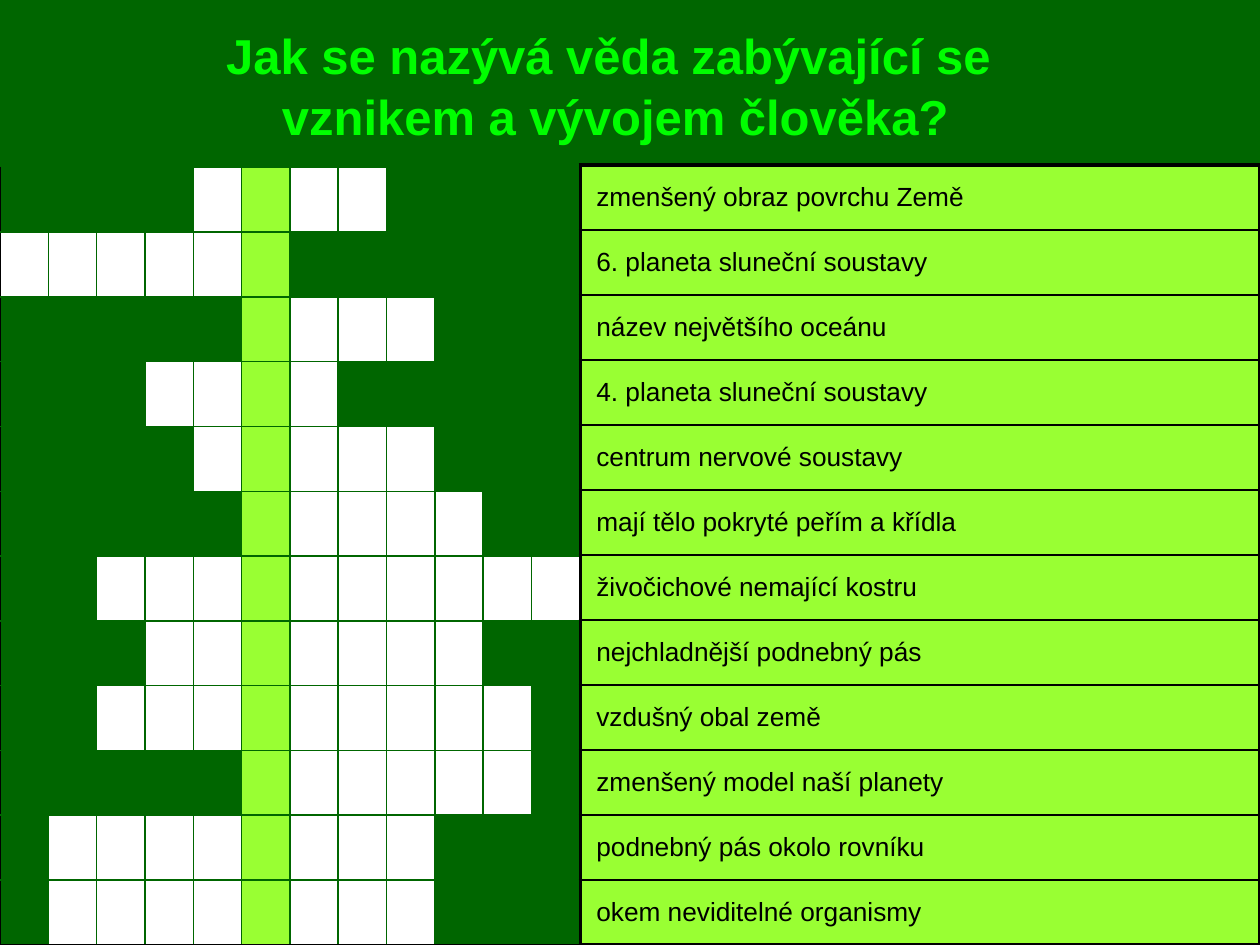
from lxml import etree
from pptx import Presentation
from pptx.dml.color import RGBColor
from pptx.enum import text
from pptx.oxml import ns
from pptx.util import Pt

DARK_GREEN = RGBColor(0x00, 0x66, 0x00)
BRIGHT_GREEN = RGBColor(0x00, 0xFF, 0x00)
LIME = RGBColor(0x99, 0xFF, 0x33)
WHITE = RGBColor(0xFF, 0xFF, 0xFF)
BLACK = RGBColor(0x00, 0x00, 0x00)

CLUES = [
    ("zmenšený obraz povrchu Země", 4, 7),
    ("6. planeta sluneční soustavy", 0, 5),
    ("název největšího oceánu", 5, 8),
    ("4. planeta sluneční soustavy", 3, 6),
    ("centrum nervové soustavy", 4, 8),
    ("mají tělo pokryté peřím a křídla", 5, 9),
    ("živočichové nemající kostru", 2, 11),
    ("nejchladnější podnebný pás", 3, 9),
    ("vzdušný obal země", 2, 10),
    ("zmenšený model naší planety", 5, 10),
    ("podnebný pás okolo rovníku", 1, 8),
    ("okem neviditelné organismy", 1, 8),
]
ROWS = len(CLUES)
LETTERS = 12
SOLUTION = 5


def add_grid(columns, left, top, width, height):
    grid = slide.shapes.add_table(
        ROWS, columns, Pt(left), Pt(top), Pt(width), Pt(height)
    ).table
    grid.first_row = False
    grid.horz_banding = False
    for column in grid.columns:
        column.width = Pt(width / columns)
    for row in grid.rows:
        row.height = Pt(height / ROWS)
    return grid


def paint_cell(cell, fill, borders):
    properties = cell._tc.get_or_add_tcPr()
    for side, (color, weight) in zip("LRTB", borders):
        line = etree.SubElement(properties, ns.qn(f"a:ln{side}"), w=str(Pt(weight)))
        solid = etree.SubElement(line, ns.qn("a:solidFill"))
        etree.SubElement(solid, ns.qn("a:srgbClr"), val=str(color))
    cell.fill.solid()
    cell.fill.fore_color.rgb = fill


prs = Presentation()
prs.slide_width = Pt(720)
prs.slide_height = Pt(540)
slide = prs.slides.add_slide(prs.slide_layouts[6])
slide.background.fill.solid()
slide.background.fill.fore_color.rgb = DARK_GREEN

question = slide.shapes.add_textbox(Pt(8.5), Pt(0), Pt(686), Pt(96)).text_frame
question.word_wrap = True
question.vertical_anchor = text.MSO_ANCHOR.MIDDLE
heading = question.paragraphs[0]
heading.alignment = text.PP_ALIGN.CENTER
heading.line_spacing = 1.05
for number, wording in enumerate(
    ["Jak se nazývá věda zabývající se ", "vznikem a vývojem člověka?"]
):
    if number:
        heading.add_line_break()
    run = heading.add_run()
    run.text = wording
    run.font.name = "Arial"
    run.font.size = Pt(28)
    run.font.bold = True
    run.font.color.rgb = BRIGHT_GREEN

crossword = add_grid(LETTERS, 0, 95.6, 331.6, 444.4)
for row, (clue, first, last) in enumerate(CLUES):
    for column in range(LETTERS):
        if column == SOLUTION:
            fill = LIME
        elif first <= column <= last:
            fill = WHITE
        else:
            fill = DARK_GREEN
        outer_sides = [column == 0, column == LETTERS - 1, False, row == ROWS - 1]
        borders = [(BLACK if outer else DARK_GREEN, 1) for outer in outer_sides]
        paint_cell(crossword.cell(row, column), fill, borders)

clue_list = add_grid(1, 331.6, 94.3, 388.4, 445.7)
for row, (clue, first, last) in enumerate(CLUES):
    cell = clue_list.cell(row, 0)
    outer_sides = [True, True, row == 0, row == ROWS - 1]
    paint_cell(cell, LIME, [(BLACK, 2.25 if outer else 1) for outer in outer_sides])
    cell.vertical_anchor = text.MSO_ANCHOR.MIDDLE
    cell.margin_left = cell.margin_right = Pt(9.2)
    cell.margin_top = cell.margin_bottom = Pt(3)
    run = cell.text_frame.paragraphs[0].add_run()
    run.text = clue
    run.font.name = "Arial"
    run.font.size = Pt(15)
    run.font.color.rgb = BLACK

prs.save("out.pptx")
